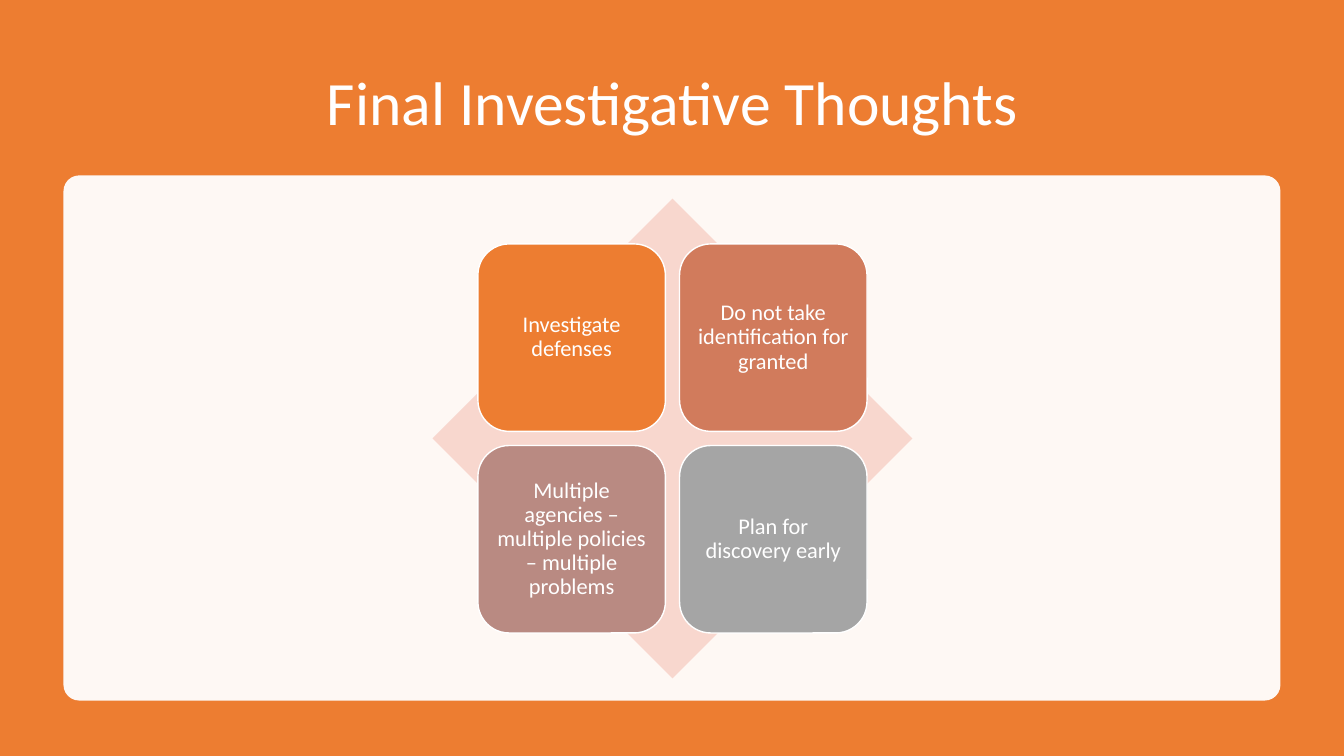
from lxml import etree
from pptx import Presentation
from pptx import util as u
from pptx.dml.color import RGBColor
from pptx.enum import shapes, text
from pptx.oxml import ns

COLORS = {
    "orange": "ED7D31",
    "white": "FFFFFF",
    "blush": "F8D7CE",
    "terracotta": "D17B5C",
    "mauve": "B98A82",
    "gray": "A5A5A5",
}
THOUGHTS = [
    ("Investigate defenses", "orange"),
    ("Do not take identification for granted", "terracotta"),
    ("Multiple agencies – multiple policies – multiple problems", "mauve"),
    ("Plan for discovery early", "gray"),
]
TILE_LEFT, TILE_TOP, TILE_SIZE, TILE_STEP = 4.74, 2.42, 1.86, 2


def add_panel(slide, preset, box, color):
    """Add a flat, unlined shape filled with a named colour."""
    panel = slide.shapes.add_shape(preset, *map(u.Inches, box))
    panel.shadow.inherit = False
    panel.fill.solid()
    panel.fill.fore_color.rgb = RGBColor.from_string(COLORS[color])
    panel.line.fill.background()
    return panel


def set_opacity(panel, percent):
    """Make the solid fill of a panel partly transparent."""
    color = panel.fill._xPr.find(ns.qn("a:solidFill"))[0]
    etree.SubElement(color, ns.qn("a:alpha"), val=str(percent * 1000))


def write_centered(frame, wording, size):
    """Write one white paragraph in the middle of a text frame."""
    frame.word_wrap = True
    frame.vertical_anchor = text.MSO_ANCHOR.MIDDLE
    paragraph = frame.paragraphs[0]
    paragraph.alignment = text.PP_ALIGN.CENTER
    paragraph.line_spacing = 0.9
    run = paragraph.add_run()
    run.text = wording
    run.font.name = "Calibri"
    run.font.size = u.Pt(size)
    run.font.color.rgb = RGBColor.from_string(COLORS["white"])


def add_title(slide, wording):
    """Add the slide title above the card."""
    title = slide.shapes.add_textbox(*map(u.Inches, (0.92, 0.5, 11.5, 1.1)))
    write_centered(title.text_frame, wording, 44)


def add_tile(slide, index, wording, color):
    """Add one rounded tile of the two-by-two matrix."""
    row, column = divmod(index, 2)
    box = (TILE_LEFT + column * TILE_STEP, TILE_TOP + row * TILE_STEP,
           TILE_SIZE, TILE_SIZE)
    tile = add_panel(slide, shapes.MSO_SHAPE.ROUNDED_RECTANGLE, box, color)
    tile.line.color.rgb = RGBColor.from_string(COLORS["white"])
    tile.line.width = u.Pt(1)
    frame = tile.text_frame
    frame.margin_left = frame.margin_right = u.Inches(0.07)
    frame.margin_top = frame.margin_bottom = u.Inches(0.07)
    write_centered(frame, wording, 16)


def main():
    """Build and save the slide."""
    deck = Presentation()
    deck.slide_width, deck.slide_height = u.Inches(13.33), u.Inches(7.5)
    slide = deck.slides.add_slide(deck.slide_layouts[6])

    add_panel(slide, shapes.MSO_SHAPE.RECTANGLE, (0, 0, 13.33, 7.5), "orange")
    add_title(slide, "Final Investigative Thoughts")
    card = add_panel(slide, shapes.MSO_SHAPE.ROUNDED_RECTANGLE,
                     (0.63, 1.74, 12.07, 5.21), "white")
    card.adjustments[0] = 0.03
    set_opacity(card, 95)

    add_panel(slide, shapes.MSO_SHAPE.DIAMOND, (4.29, 1.97, 4.76, 4.76), "blush")
    for index, (wording, color) in enumerate(THOUGHTS):
        add_tile(slide, index, wording, color)

    deck.save("out.pptx")


if __name__ == "__main__":
    main()
